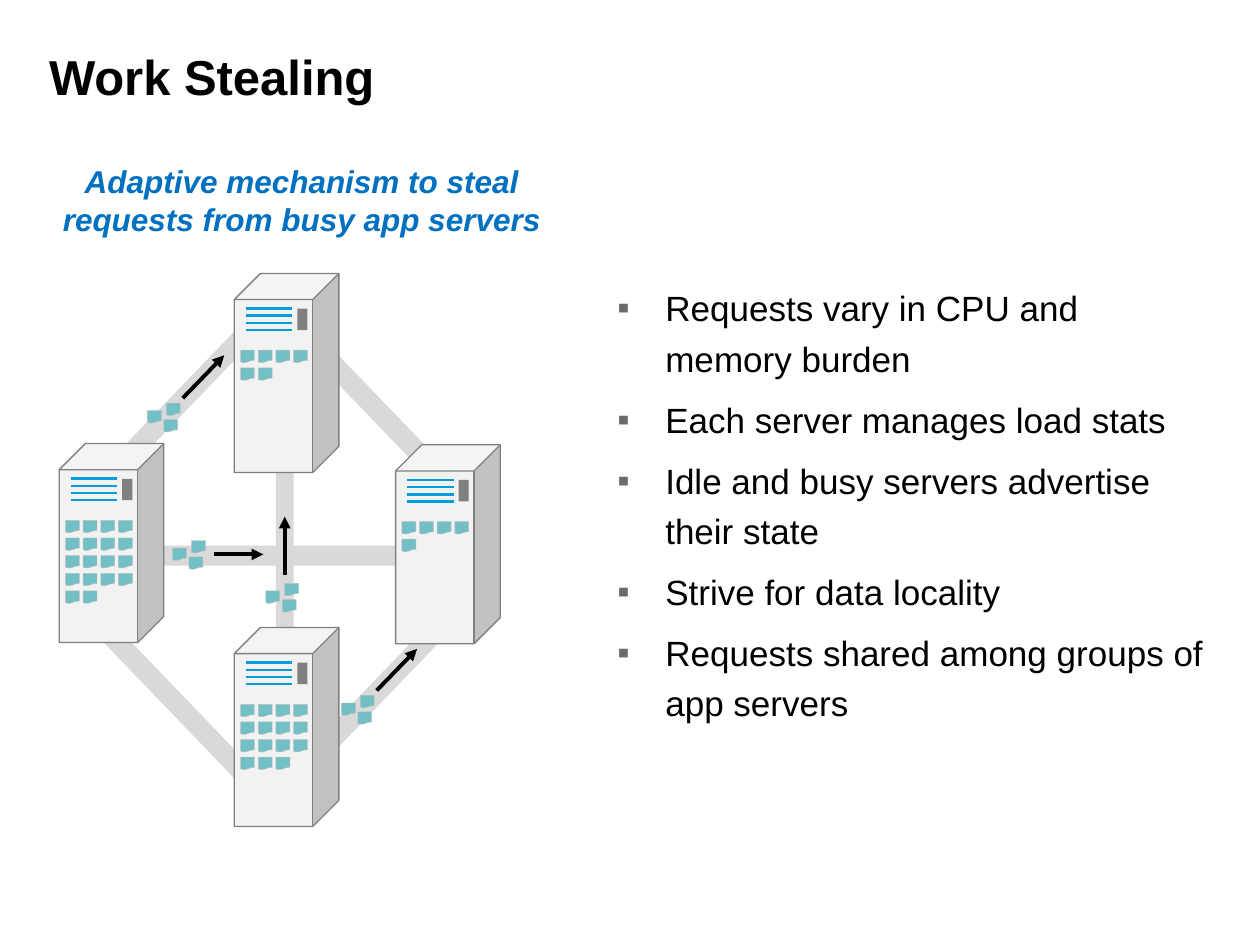
from lxml.etree import SubElement
from pptx import Presentation
from pptx.dml.color import RGBColor
from pptx.enum.shapes import MSO_CONNECTOR as Link, MSO_SHAPE as Shape
from pptx.enum.text import MSO_ANCHOR as Anchor, PP_ALIGN as Align
from pptx.oxml.ns import qn
from pptx.util import Inches, Pt

LINKS = [
    (2.15, 5.32, 1.87, 0.16, 313.9),
    (0.44, 3.17, 1.87, 0.16, 313.9),
    (2.17, 3.29, 1.87, 0.16, 46.1),
    (0.48, 5.52, 1.87, 0.16, 46.1),
    (1.3, 4.33, 1.87, 0.16, 0),
    (2.19, 3.62, 0.14, 1.42, 0),
]
SERVERS = [(0.47, 3.52, 18), (1.86, 2.17, 6), (1.86, 4.98, 15), (3.14, 3.53, 5)]
TRANSFERS = [
    ((1.17, 3.26), (1.45, 3.16, 1.78, 2.82)),
    ((2.71, 5.58), (2.99, 5.48, 3.31, 5.15)),
    ((2.11, 4.69), (2.26, 4.56, 2.26, 4.1)),
    ((1.37, 4.35), (1.7, 4.4, 2.09, 4.4)),
]
POINTS = [
    "Requests vary in CPU and memory burden",
    "Each server manages load stats",
    "Idle and busy servers advertise their state",
    "Strive for data locality",
    "Requests shared among groups of app servers",
]


def color(value):
    return RGBColor.from_string(value)


class Board:
    """Draws styled elements on the current slide."""

    font = "Arial"
    gray, blue, teal = "808080", "049CDB", "72BFC5"

    def __init__(self, page):
        self.page = page

    def shape(self, kind, place, fill, line=None, width=0.75, turn=0):
        item = self.page.shapes.add_shape(kind, *map(Inches, place))
        item.shadow.inherit = False
        item.rotation = turn
        item.fill.solid()
        item.fill.fore_color.rgb = color(fill)
        if line:
            item.line.color.rgb = color(line)
            item.line.width = Pt(width)
        else:
            item.line.fill.background()

    def line(self, parent, ends, stroke, width, arrow=False):
        item = parent.shapes.add_connector(Link.STRAIGHT, *map(Inches, ends))
        item.line.color.rgb = color(stroke)
        item.line.width = Pt(width)
        if arrow:
            SubElement(item.line._get_or_add_ln(), qn("a:tailEnd"), type="triangle")
        SubElement(item._element.spPr, qn("a:effectLst"))

    def request(self, left, top):
        self.shape(Shape.FLOWCHART_DOCUMENT, (left, top, 0.11, 0.1), self.teal, "BFBFBF", 0.25)

    def server(self, left, top, load):
        self.shape(Shape.CUBE, (left, top, 0.83, 1.58), "F2F2F2", self.gray)
        self.shape(Shape.RECTANGLE, (left + 0.5, top + 0.28, 0.08, 0.17), self.gray)
        vents = self.page.shapes.add_group_shape()
        for index in range(4):
            level = top + 0.28 + index * 0.17 / 3
            self.line(vents, (left + 0.09, level, left + 0.46, level), self.blue, 1.5)
        for index in range(load):
            row, column = divmod(index, 4)
            self.request(left + 0.05 + 0.14 * column, top + 0.61 + 0.14 * row)

    def transfer(self, start, ends):
        for across, down in ((0.15, -0.06), (0.13, 0.07), (0, 0)):
            self.request(start[0] + across, start[1] + down)
        self.line(self.page, ends, "000000", 2.25, arrow=True)

    def text(self, place, lines, size, ink="000000", margins=None, anchor=Anchor.TOP,
             bullet=None, layout=None, **style):
        box = self.page.shapes.add_textbox(*map(Inches, place))
        frame = box.text_frame
        frame.word_wrap = True
        frame.vertical_anchor = anchor
        for side, gap in (margins or {}).items():
            setattr(frame, f"margin_{side}", Inches(gap))
        for index, words in enumerate(lines):
            para = frame.add_paragraph() if index else frame.paragraphs[0]
            for name, value in (layout or {}).items():
                if index or name != "space_before":
                    setattr(para, name, value)
            if bullet:
                self.bullet(para, *bullet)
            span = para.add_run()
            span.text = words
            for name, value in {"name": self.font, "size": Pt(size), **style}.items():
                setattr(span.font, name, value)
            span.font.color.rgb = color(ink)

    def bullet(self, para, mark, ink):
        props = para._p.get_or_add_pPr()
        props.set("marL", str(Inches(0.39)))
        props.set("indent", str(Inches(-0.38)))
        SubElement(SubElement(props, qn("a:buClr")), qn("a:srgbClr"), val=ink)
        SubElement(props, qn("a:buFont"), typeface=self.font)
        SubElement(props, qn("a:buChar"), char=mark)


def main():
    deck = Presentation()
    deck.slide_width, deck.slide_height = Inches(10), Inches(7.5)
    board = Board(deck.slides.add_slide(deck.slide_layouts[6]))
    for *place, turn in LINKS:
        board.shape(Shape.RECTANGLE, place, "D9D9D9", turn=turn)
    board.text((0.33, 0, 9, 1.2), ["Work Stealing"], 28, anchor=Anchor.MIDDLE, bold=True,
               margins={"left": 0.06, "top": 0.06, "right": 0.1, "bottom": 0.06})
    board.text((4.82, 2.14, 4.89, 3.81), POINTS, 20, bullet=("▪", "6B6B6B"),
               margins={"left": 0.07, "top": 0.07, "right": 0.15, "bottom": 0.07},
               layout={"line_spacing": 1.2, "space_before": Pt(6)})
    for server in SERVERS:
        board.server(*server)
    for transfer in TRANSFERS:
        board.transfer(*transfer)
    board.text((0.31, 1.24, 4.17, 0.71),
               ["Adaptive mechanism to steal requests from busy app servers"],
               18, "0070C0", layout={"alignment": Align.CENTER}, bold=True, italic=True)
    deck.save("out.pptx")


if __name__ == "__main__":
    main()
